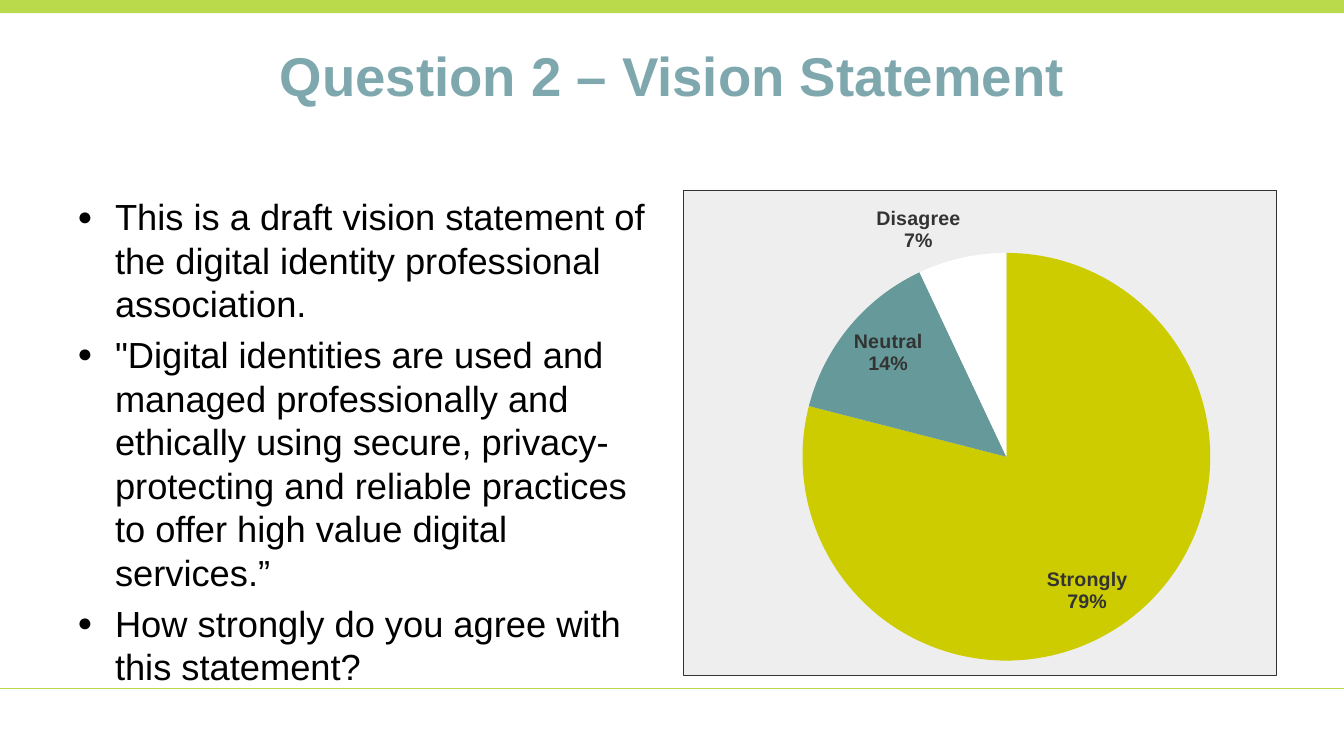
from pptx import Presentation
from pptx.chart.data import CategoryChartData
from pptx.dml.color import RGBColor
from pptx.enum.chart import XL_CHART_TYPE, XL_LABEL_POSITION
from pptx.enum.shapes import MSO_CONNECTOR, MSO_SHAPE
from pptx.enum.text import MSO_ANCHOR, PP_ALIGN
from pptx.oxml import parse_xml
from pptx.oxml.ns import nsdecls, qn
from pptx.util import Cm, Pt

PIE = XL_CHART_TYPE.PIE
INSIDE, OUTSIDE = XL_LABEL_POSITION.INSIDE_END, XL_LABEL_POSITION.OUTSIDE_END
STRAIGHT, RECTANGLE = MSO_CONNECTOR.STRAIGHT, MSO_SHAPE.RECTANGLE
TOP, MIDDLE = MSO_ANCHOR.TOP, MSO_ANCHOR.MIDDLE
LEFT, CENTER = PP_ALIGN.LEFT, PP_ALIGN.CENTER

WIDTH, HEIGHT = 33.87, 19.05
MARGIN = 1.7
COLUMN_TOP, COLUMN_WIDTH, COLUMN_HEIGHT = 4.78, 14.96, 12.24
LIME, TEAL, INK, PANEL = "BAD94B", "7EA8AD", "333333", "EEEEEE"

STATEMENT = [
    "This is a draft vision statement of the digital identity professional association.",
    "\"Digital identities are used and managed professionally and ethically using secure, "
    "privacy-protecting and reliable practices to offer high value digital services.”",
    "How strongly do you agree with this statement?",
]
# answer, share, slice colour, label position
ANSWERS = [
    ("Strongly", 0.79, "CCCC00", INSIDE),
    ("Neutral", 0.14, "669999", INSIDE),
    ("Disagree", 0.07, "FFFFFF", OUTSIDE),
]


def rgb(hex_color):
    return RGBColor.from_string(hex_color)


def set_font(font, size, color, name="Arial", bold=False):
    font.name, font.size, font.bold = name, Pt(size), bold
    font.color.rgb = rgb(color)


def add_bullet(paragraph, indent):
    properties = paragraph._p.get_or_add_pPr()
    properties.set("marL", str(Cm(indent)))
    properties.set("indent", str(-Cm(indent)))
    for xml in ('<a:buSzPct %s val="70000"/>', '<a:buFont %s typeface="Arial"/>',
                '<a:buChar %s char="●"/>'):
        properties.append(parse_xml(xml % nsdecls("a")))


def add_text(slide, box, paragraphs, *, size, color, bold=False, align=LEFT,
             anchor=TOP, indent=0, gap=0):
    frame = slide.shapes.add_textbox(*map(Cm, box)).text_frame
    frame.word_wrap = True
    frame.vertical_anchor = anchor
    for index, text in enumerate(paragraphs):
        paragraph = frame.paragraphs[0] if index == 0 else frame.add_paragraph()
        paragraph.text = text
        paragraph.alignment = align
        if index and gap:
            paragraph.space_before = Pt(gap)
        if indent:
            add_bullet(paragraph, indent)
        set_font(paragraph.runs[0].font, size, color, bold=bold)


def add_band(slide, height, color):
    band = slide.shapes.add_shape(RECTANGLE, 0, 0, Cm(WIDTH), Cm(height))
    band.shadow.inherit = False
    band.fill.solid()
    band.fill.fore_color.rgb = rgb(color)
    band.line.fill.background()


def add_rule(slide, y, color):
    rule = slide.shapes.add_connector(STRAIGHT, 0, Cm(y), Cm(WIDTH), Cm(y))
    rule.line.color.rgb = rgb(color)
    rule.line.width = Pt(0.5)
    rule._element.spPr.append(parse_xml("<a:effectLst %s/>" % nsdecls("a")))


def area_format(fill, line):
    return parse_xml(
        f'<c:spPr {nsdecls("c", "a")}><a:solidFill><a:srgbClr val="{fill}"/></a:solidFill>'
        f'{line}</c:spPr>')


def style_areas(chart):
    chart_node = chart._chartSpace.find(qn("c:chart"))
    plot_area = chart_node.find(qn("c:plotArea"))
    border = f'<a:ln w="3175"><a:solidFill><a:srgbClr val="{INK}"/></a:solidFill></a:ln>'
    chart_node.addnext(area_format(PANEL, border))
    plot_area.append(area_format(PANEL, "<a:ln><a:noFill/></a:ln>"))

    # Place of the pie as fractions of the chart
    for layout in plot_area.findall(qn("c:layout")):
        plot_area.remove(layout)
    place = {"x": 0.2, "y": 0.13, "w": 0.69, "h": 0.84}
    modes = "".join(f'<c:{side}Mode val="edge"/>' for side in "xy")
    sizes = "".join(f'<c:{key} val="{value}"/>' for key, value in place.items())
    plot_area.insert(0, parse_xml(
        f'<c:layout {nsdecls("c")}><c:manualLayout><c:layoutTarget val="inner"/>'
        f'{modes}{sizes}</c:manualLayout></c:layout>'))


def style_slices(series):
    for index, (_, _, color, position) in enumerate(ANSWERS):
        piece = series.points[index]
        piece.format.fill.solid()
        piece.format.fill.fore_color.rgb = rgb(color)
        piece.format.line.fill.background()
        set_font(piece.data_label.font, 14, INK, bold=True)
        piece.data_label.position = position

    # Each label shows the answer above its percentage
    flags = {"showVal": "0", "showCatName": "1", "showPercent": "1"}
    for label in series._element.iter(qn("c:dLbl")):
        for flag, value in flags.items():
            label.find(qn("c:" + flag)).set("val", value)
        separator = parse_xml("<c:separator %s>\n</c:separator>" % nsdecls("c"))
        label.append(separator)


def add_pie(slide, box):
    data = CategoryChartData(number_format="0%")
    data.categories = [answer for answer, *_ in ANSWERS]
    data.add_series("Series 1", [share for _, share, *_ in ANSWERS])
    chart = slide.shapes.add_chart(PIE, *map(Cm, box), data).chart
    chart.has_legend = False
    chart.has_title = False
    set_font(chart.font, 10, INK, name="Roboto")
    chart.plots[0].vary_by_categories = True
    style_areas(chart)
    style_slices(chart.plots[0].series[0])


def main():
    deck = Presentation()
    deck.slide_width, deck.slide_height = Cm(WIDTH), Cm(HEIGHT)
    slide = deck.slides.add_slide(deck.slide_layouts[6])

    # Top band and footer rule
    add_band(slide, 0.33, LIME)
    add_rule(slide, 17.35, LIME)

    # Title
    add_text(slide, (MARGIN, 0.43, WIDTH - 2 * MARGIN, 2.92),
             ["Question 2 – Vision Statement"],
             size=39, color=TEAL, bold=True, align=CENTER, anchor=MIDDLE)

    # Statement on the left, answers on the right
    add_text(slide, (MARGIN, COLUMN_TOP, COLUMN_WIDTH, COLUMN_HEIGHT), STATEMENT,
             size=25.9, color="000000", indent=0.95, gap=5.2)
    add_pie(slide, (WIDTH - MARGIN - COLUMN_WIDTH, COLUMN_TOP, COLUMN_WIDTH, COLUMN_HEIGHT))

    deck.save("out.pptx")


if __name__ == "__main__":
    main()
